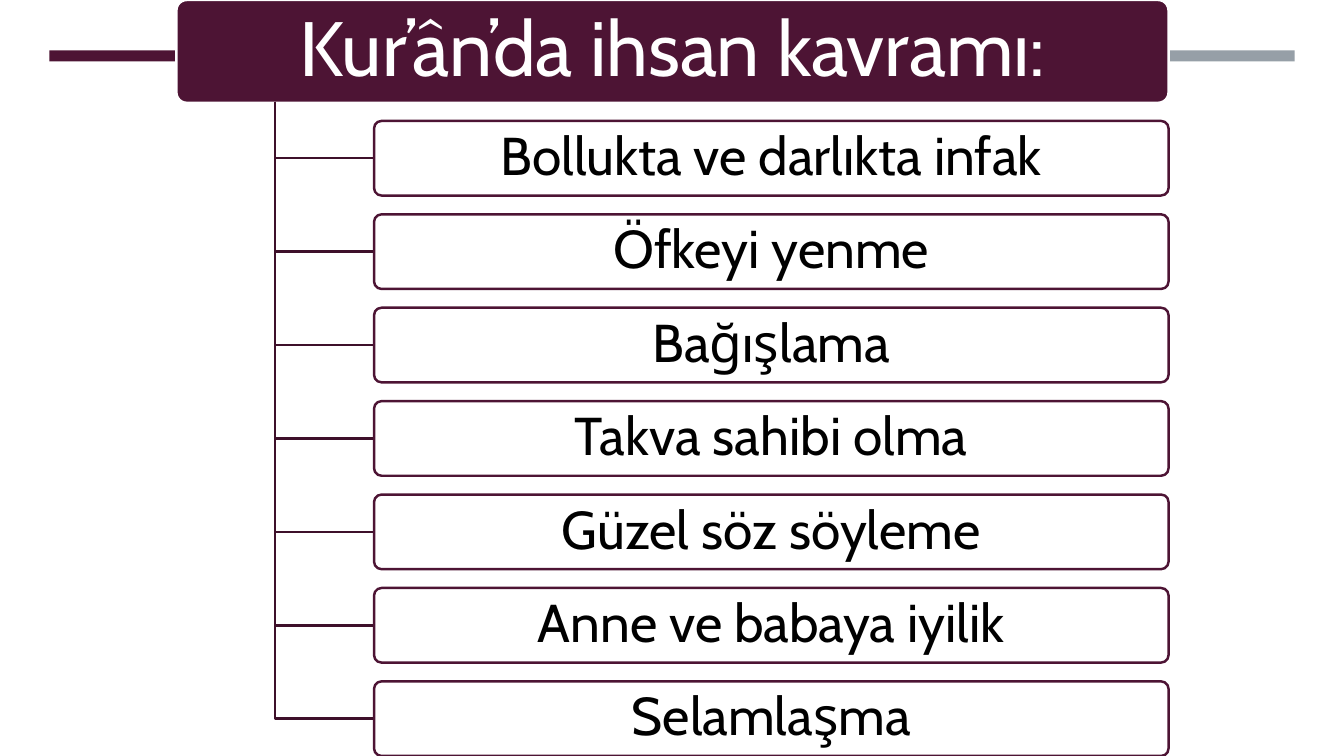
from lxml.etree import SubElement
from pptx import Presentation
from pptx.dml.color import RGBColor
from pptx.enum.shapes import MSO_SHAPE
from pptx.enum.text import MSO_ANCHOR, PP_ALIGN
from pptx.oxml.ns import qn
from pptx.util import Inches, Pt


def paint(color_format, hex_color):
    color_format.rgb = RGBColor.from_string(hex_color)


def add_panel(kind, left, top, width, height, fill):
    panel = slide.shapes.add_shape(
        kind, Inches(left), Inches(top), Inches(width), Inches(height))
    panel.shadow.inherit = False
    panel.fill.solid()
    paint(panel.fill.fore_color, fill)
    panel.line.fill.background()
    return panel


PLUM, DARK_PLUM, GREY, WHITE, BLACK = "4D1434", "3E102A", "969FA7", "FFFFFF", "000000"
TRUNK_X, TRUNK_TOP = 2.73, 1.01
BOX_LEFT, BOX_TOP, BOX_WIDTH, BOX_HEIGHT = 3.71, 1.2, 7.88, 0.74
BOX_BOTTOM = 7.5

virtues = [
    "Bollukta ve darlıkta infak",
    "Öfkeyi yenme",
    "Bağışlama",
    "Takva sahibi olma",
    "Güzel söz söyleme",
    "Anne ve babaya iyilik",
    "Selamlaşma",
]
pitch = (BOX_BOTTOM - BOX_HEIGHT - BOX_TOP) / (len(virtues) - 1)

presentation = Presentation()
presentation.slide_width = Inches(13.33)
presentation.slide_height = Inches(7.5)
slide = presentation.slides.add_slide(presentation.slide_layouts[6])

add_panel(MSO_SHAPE.RECTANGLE, 0.49, 0.5, 4.05, 0.11, PLUM)
add_panel(MSO_SHAPE.RECTANGLE, 8.79, 0.5, 4.05, 0.11, GREY)

heading = add_panel(MSO_SHAPE.ROUNDED_RECTANGLE, 1.75, 0, 9.84, 1.02, PLUM)
labels = [(heading, "Kur’ân’da ihsan kavramı:", 55, WHITE, WHITE)]
for row, virtue in enumerate(virtues):
    top = BOX_TOP + row * pitch
    middle = Inches(top + BOX_HEIGHT / 2)
    outline = slide.shapes.build_freeform(Inches(TRUNK_X), Inches(TRUNK_TOP))
    outline.add_line_segments(
        [(Inches(TRUNK_X), middle), (Inches(BOX_LEFT), middle)], close=False)
    elbow = outline.convert_to_shape()
    elbow.shadow.inherit = False
    elbow.fill.background()
    elbow.line.width = Pt(1.75)
    paint(elbow.line.color, DARK_PLUM)

    box = add_panel(MSO_SHAPE.ROUNDED_RECTANGLE, BOX_LEFT, top,
                    BOX_WIDTH, BOX_HEIGHT, WHITE)
    fill_color = box._element.spPr.find(qn("a:solidFill"))[0]
    SubElement(fill_color, qn("a:alpha"), val="90000")
    labels.append((box, virtue, 38, BLACK, PLUM))

for box, wording, size, text_color, border in labels:
    box.adjustments[0] = 0.1
    box.line.width = Pt(1.75)
    paint(box.line.color, border)
    frame = box.text_frame
    frame.word_wrap = True
    frame.vertical_anchor = MSO_ANCHOR.MIDDLE
    frame.margin_left = frame.margin_right = Inches(0.1)
    frame.margin_top = frame.margin_bottom = Inches(0.07)
    frame.text = wording
    paragraph = frame.paragraphs[0]
    paragraph.alignment = PP_ALIGN.CENTER
    paragraph.line_spacing = 0.9
    paragraph.font.name = "Cabin"
    paragraph.font.size = Pt(size)
    paint(paragraph.font.color, text_color)

presentation.save("out.pptx")
